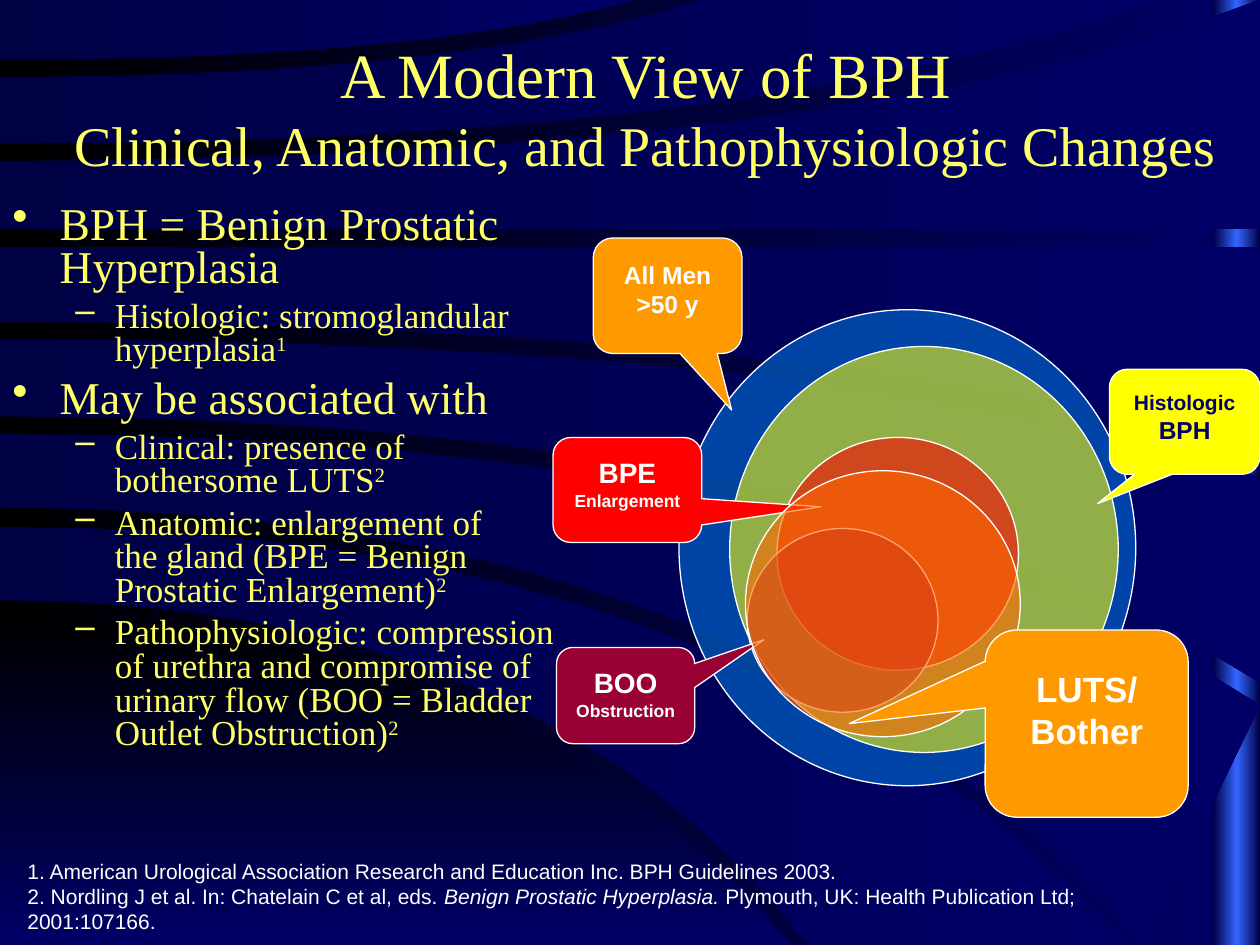
import pptx
import pptx.util
import pptx.dml.color
import pptx.enum.shapes
import pptx.enum.text
import pptx.oxml
import pptx.oxml.ns
from dataclasses import dataclass

Pt = pptx.util.Pt
Kind = pptx.enum.shapes.MSO_SHAPE
Align = pptx.enum.text.PP_ALIGN
Anchor = pptx.enum.text.MSO_ANCHOR


@dataclass
class Theme:
    serif: str = "Times New Roman"
    sans: str = "Arial"
    black: str = "000000"
    night: str = "000044"
    navy: str = "000066"
    glow: str = "3366FF"
    lemon: str = "FFFF66"
    white: str = "FFFFFF"
    blue: str = "0066CC"
    yellow: str = "FFFF00"
    red: str = "FF0000"
    wine: str = "990033"
    flame: str = "FF6600"
    amber: str = "FF9900"
    head: int = 36
    sub: int = 32
    major: int = 26
    minor: int = 20
    big: int = 16
    mid: int = 14
    note: int = 12
    small: int = 10


def color(code):
    return pptx.dml.color.RGBColor.from_string(code)


def curve(start, reach, end, steps=16):
    dots = []
    for i in range(steps + 1):
        t = i / steps
        x = reach * (1.34 * t * (1 - t) + t * t)
        dots.append((x, start + (end - start) * t * t))
    return dots


class Deck:
    def __init__(self, theme):
        self.theme = theme
        self.file = pptx.Presentation()
        self.file.slide_width, self.file.slide_height = Pt(720), Pt(540)
        self.slide = self.file.slides.add_slide(self.file.slide_layouts[5])
        self.shapes = self.slide.shapes

    def blend(self, fill, first, last, angle=0):
        fill.gradient()
        fill.gradient_angle = angle
        for stop, code in zip(fill.gradient_stops, (first, last)):
            stop.color.rgb = color(code)

    def shape(self, kind, box):
        item = self.shapes.add_shape(kind, *map(Pt, box))
        item.shadow.inherit = False
        return item

    def paint(self, item, fill):
        item.fill.solid()
        item.fill.fore_color.rgb = color(fill)
        item.line.color.rgb = color(self.theme.white)
        item.line.width = Pt(0.75)

    def strip(self, box, first, last):
        item = self.shape(Kind.RECTANGLE, box)
        self.blend(item.fill, first, last)
        item.line.fill.background()

    def wave(self, dots, first, last, angle=0):
        dots = [(Pt(x), Pt(y)) for x, y in dots]
        pen = self.shapes.build_freeform(*dots[0])
        pen.add_line_segments(dots[1:], close=True)
        item = pen.convert_to_shape()
        item.shadow.inherit = False
        self.blend(item.fill, first, last, angle)
        item.line.fill.background()

    def ring(self, box, fill, alpha):
        item = self.shape(Kind.OVAL, box)
        self.paint(item, fill)
        tint = item.fill._xPr.find(".//" + pptx.oxml.ns.qn("a:srgbClr"))
        tint.append(pptx.oxml.parse_xml(
            f'<a:alpha {pptx.oxml.ns.nsdecls("a")} val="{alpha * 1000}"/>'))

    def callout(self, box, fill, tip):
        item = self.shape(Kind.ROUNDED_RECTANGULAR_CALLOUT, box)
        self.paint(item, fill)
        for i, value in enumerate((*tip, 0.17)):
            item.adjustments[i] = value

    def style(self, para, runs, size, face, ink, bold=False):
        font = para.font
        font.size, font.name, font.bold = Pt(size), face, bold
        font.color.rgb = color(ink)
        for part in runs:
            text, look = (part, {}) if isinstance(part, str) else part
            for i, piece in enumerate(text.split("\v")):
                if i:
                    para.add_line_break()
                if not piece:
                    continue
                run = para.add_run()
                run.text = piece
                if "size" in look:
                    run.font.size = Pt(look["size"])
                if "italic" in look:
                    run.font.italic = True
                if "raised" in look:
                    run._r.get_or_add_rPr().set("baseline", "30000")

    def frame(self, box, inset=7.2, wrap=True, anchor=Anchor.TOP):
        item = self.shapes.add_textbox(*map(Pt, box))
        area = item.text_frame
        area.word_wrap, area.vertical_anchor = wrap, anchor
        area.margin_left = area.margin_right = Pt(inset)
        return item

    def paras(self, area, count):
        return [area.paragraphs[0]] + [area.add_paragraph() for _ in range(count - 1)]

    def title(self, box, runs):
        item = self.shapes.title
        item.left, item.top, item.width, item.height = map(Pt, box)
        area = item.text_frame
        area.word_wrap, area.vertical_anchor = True, Anchor.MIDDLE
        para = area.paragraphs[0]
        para.alignment = Align.CENTER
        self.style(para, runs, self.theme.head, self.theme.serif, self.theme.lemon)
        self.shapes._spTree.append(item._element)

    def outline(self, box, rows):
        t = self.theme
        area = self.frame(box).text_frame
        for i, (para, (level, *runs)) in enumerate(zip(self.paras(area, len(rows)), rows)):
            size, left, hang, mark = ((t.major, 27, 27, "•"), (t.minor, 58.5, 22.5, "–"))[level]
            para.level, para.line_spacing = level, 0.8
            para.space_before = Pt(size / 4 if i else 0)
            props = para._p.get_or_add_pPr()
            props.set("marL", str(Pt(left)))
            props.set("indent", str(-Pt(hang)))
            props.append(pptx.oxml.parse_xml(
                f'<a:buChar {pptx.oxml.ns.nsdecls("a")} char="{mark}"/>'))
            self.style(para, runs, size, t.serif, t.lemon)

    def label(self, box, drop, rows, ink, fill):
        left, top, width, height = box
        item = self.frame((left + 10, top + drop, width - 20, height - 20), 0)
        item.fill.solid()
        item.fill.fore_color.rgb = color(fill)
        for para, (size, *runs) in zip(self.paras(item.text_frame, len(rows)), rows):
            para.alignment = Align.CENTER
            self.style(para, runs, size, self.theme.sans, ink, True)

    def cite(self, box, rows):
        t = self.theme
        area = self.frame(box, anchor=Anchor.BOTTOM).text_frame
        for para, runs in zip(self.paras(area, len(rows)), rows):
            self.style(para, runs, t.note, t.sans, t.white)


WAVES = [
    ((301, 643, 540), (343, 462, 540)),
    ((248, 720, 403), (290, 654, 540)),
    ((194, 720, 273), (238, 720, 390)),
    ((141, 720, 141), (184, 720, 262)),
    ((92, 720, 0), (131, 720, 131)),
    ((44, 400, 0), (82, 660, 0)),
    ((0, 361, 0), (34, 361, 0)),
]


def main():
    t = Theme()
    deck = Deck(t)
    deck.blend(deck.slide.background.fill, t.black, t.navy)
    deck.strip((693.4, 0, 13.3, 540), t.night, t.glow)
    deck.strip((706.7, 0, 13.3, 540), t.glow, t.night)
    deck.wave(curve(354, 452, 540) + [(0, 540)], t.black, t.navy, 270)
    for upper, lower in WAVES:
        deck.wave(curve(*upper) + curve(*lower)[::-1], t.night, t.navy)
    deck.title((0, 24, 738, 74), [
        "A Modern View of BPH\v",
        ("Clinical, Anatomic, and Pathophysiologic Changes", {"size": t.sub})])
    one, two = (("1", {"raised": True}), ("2", {"raised": True}))
    deck.outline((0, 113.8, 334.8, 348.5), [
        (0, "BPH = Benign Prostatic Hyperplasia"),
        (1, "Histologic: stromoglandular hyperplasia", one),
        (0, "May be associated with"),
        (1, "Clinical: presence of \vbothersome LUTS", two),
        (1, "Anatomic: enlargement of \vthe gland (BPE = Benign Prostatic Enlargement)", two),
        (1, "Pathophysiologic: compression of urethra and compromise of urinary flow "
            "(BOO = Bladder \vOutlet Obstruction)", two)])
    deck.cite((8.6, 496.8, 674, 40.3), [
        ["1. American Urological Association Research and Education Inc. BPH Guidelines 2003."],
        ["2. Nordling J et al. In: Chatelain C et al, eds. ",
         ("Benign Prostatic Hyperplasia. ", {"italic": True}),
         "Plymouth, UK: Health Publication Ltd; 2001:107166."]])

    groups = [
        ((388, 177, 261, 272), t.blue, 67, (339, 136, 85, 66), t.amber, (0.43, 0.99), 9,
         [(t.mid, "All Men"), (t.mid, ">50 y")], t.white),
        ((417, 198, 222, 232), t.yellow, 57, (634, 211, 86, 60), t.yellow, (-0.58, 0.78), 8,
         [(t.note, "Histologic ", ("BPH", {"size": t.mid}))], t.navy),
        ((444, 250, 138, 133), t.red, 59, (316, 250, 85, 60), t.red, (1.3, 0.16), 7,
         [(t.big, "BPE"), (t.small, "Enlargement")], t.white),
        ((427, 302, 109, 105), t.wine, 51, (318, 370, 79, 55), t.wine, (1, -0.58), 7,
         [(t.big, "BOO"), (t.small, "Obstruction")], t.white),
        ((426, 269, 157, 152), t.flame, 59, (563, 360, 116, 107), t.amber, (-1.17, 0), 18,
         [(t.minor, "LUTS/"), (t.minor, "Bother")], t.white),
    ]
    for ring, tint, alpha, box, fill, tip, drop, rows, ink in groups:
        deck.ring(ring, tint, alpha)
        deck.callout(box, fill, tip)
        deck.label(box, drop, rows, ink, fill)
    deck.file.save("out.pptx")


if __name__ == "__main__":
    main()
